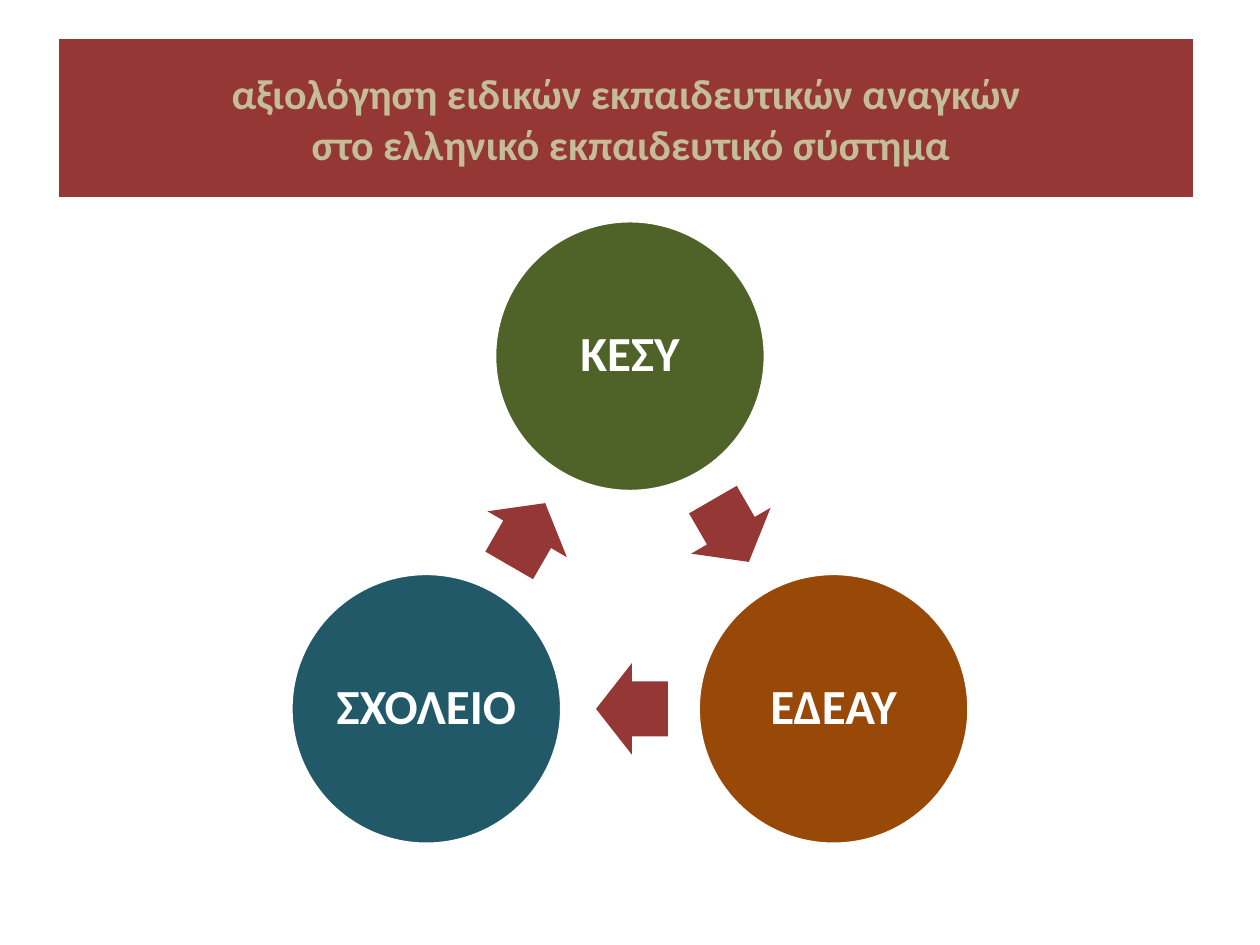
from dataclasses import dataclass
from math import cos, radians, sin

from pptx import Presentation
from pptx import util as u
from pptx.dml.color import RGBColor
from pptx.enum import shapes, text

RED = "953735"
WHITE = "FFFFFF"
MID_X, MID_Y = 12.7, 11.92  # centre of the cycle, in cm
RING = 4.74  # from the centre of the cycle to each circle's centre
DISC = 5.46
ARROW_W, ARROW_H = 1.45, 1.85
BACK = 0.04  # each arrow sits slightly behind the midpoint
STEP = 120


@dataclass
class Stage:
    label: str
    color: str


STAGES = [
    Stage("ΚΕΣΥ", "4F6228"),
    Stage("ΕΔΕΑΥ", "984807"),
    Stage("ΣΧΟΛΕΙΟ", "215968"),
]


def paint(target, color: str) -> None:
    """Give a fill a solid colour."""
    target.solid()
    target.fore_color.rgb = RGBColor.from_string(color)


def set_text(shape, words: str, size: int, color: str) -> None:
    """Write centred bold text in a shape."""
    frame = shape.text_frame
    frame.text = words
    frame.auto_size = text.MSO_AUTO_SIZE.NONE
    frame.vertical_anchor = text.MSO_ANCHOR.MIDDLE
    for para in frame.paragraphs:
        para.alignment = text.PP_ALIGN.CENTER
        for run in para.runs:
            run.font.name = "Calibri"
            run.font.size = u.Pt(size)
            run.font.bold = True
            paint(run.font.fill, color)


def add_mid(slide, kind, x: float, y: float, wide: float, high: float, color: str):
    """Add a shape around its centre point, in cm."""
    shape = slide.shapes.add_shape(
        kind, u.Cm(x - wide / 2), u.Cm(y - high / 2), u.Cm(wide), u.Cm(high)
    )
    shape.shadow.inherit = False
    paint(shape.fill, color)
    return shape


def add_disc(slide, stage: Stage, angle: float) -> None:
    x = MID_X + RING * cos(radians(angle))
    y = MID_Y + RING * sin(radians(angle))
    disc = add_mid(slide, shapes.MSO_SHAPE.OVAL, x, y, DISC, DISC, stage.color)
    paint(disc.line.fill, WHITE)
    disc.line.width = u.Pt(2)
    set_text(disc, stage.label, 28, WHITE)
    frame = disc.text_frame
    frame.word_wrap = False
    frame.margin_left = frame.margin_right = u.Cm(0.1)
    frame.margin_top = frame.margin_bottom = u.Cm(0.1)
    frame.paragraphs[0].line_spacing = 0.9


def add_arrow(slide, angle: float) -> None:
    """Add a clockwise arrow between two neighbouring circles."""
    mid = angle + STEP / 2
    turn = mid + 90
    reach = RING * cos(radians(STEP / 2))
    x = MID_X + reach * cos(radians(mid)) - BACK * cos(radians(turn))
    y = MID_Y + reach * sin(radians(mid)) - BACK * sin(radians(turn))
    arrow = add_mid(
        slide, shapes.MSO_SHAPE.RIGHT_ARROW, x, y, ARROW_W, ARROW_H, RED
    )
    arrow.line.fill.background()
    arrow.adjustments[0] = 0.6
    arrow.adjustments[1] = 0.5
    arrow.rotation = turn


def add_title(slide, words: str) -> None:
    title = slide.shapes.title
    title.left, title.top = u.Cm(1.19), u.Cm(0.79)
    title.width, title.height = u.Cm(22.86), u.Cm(3.18)
    paint(title.fill, RED)
    set_text(title, words, 24, "C4BD97")


def main() -> None:
    deck = Presentation()
    deck.slide_width, deck.slide_height = u.Cm(25.4), u.Cm(19.05)
    slide = deck.slides.add_slide(deck.slide_layouts[5])
    add_title(
        slide,
        "αξιολόγηση ειδικών εκπαιδευτικών αναγκών\v"
        " στο ελληνικό εκπαιδευτικό σύστημα",
    )
    for i, stage in enumerate(STAGES):
        angle = i * STEP - 90
        add_disc(slide, stage, angle)
        add_arrow(slide, angle)
    deck.save("out.pptx")


if __name__ == "__main__":
    main()
